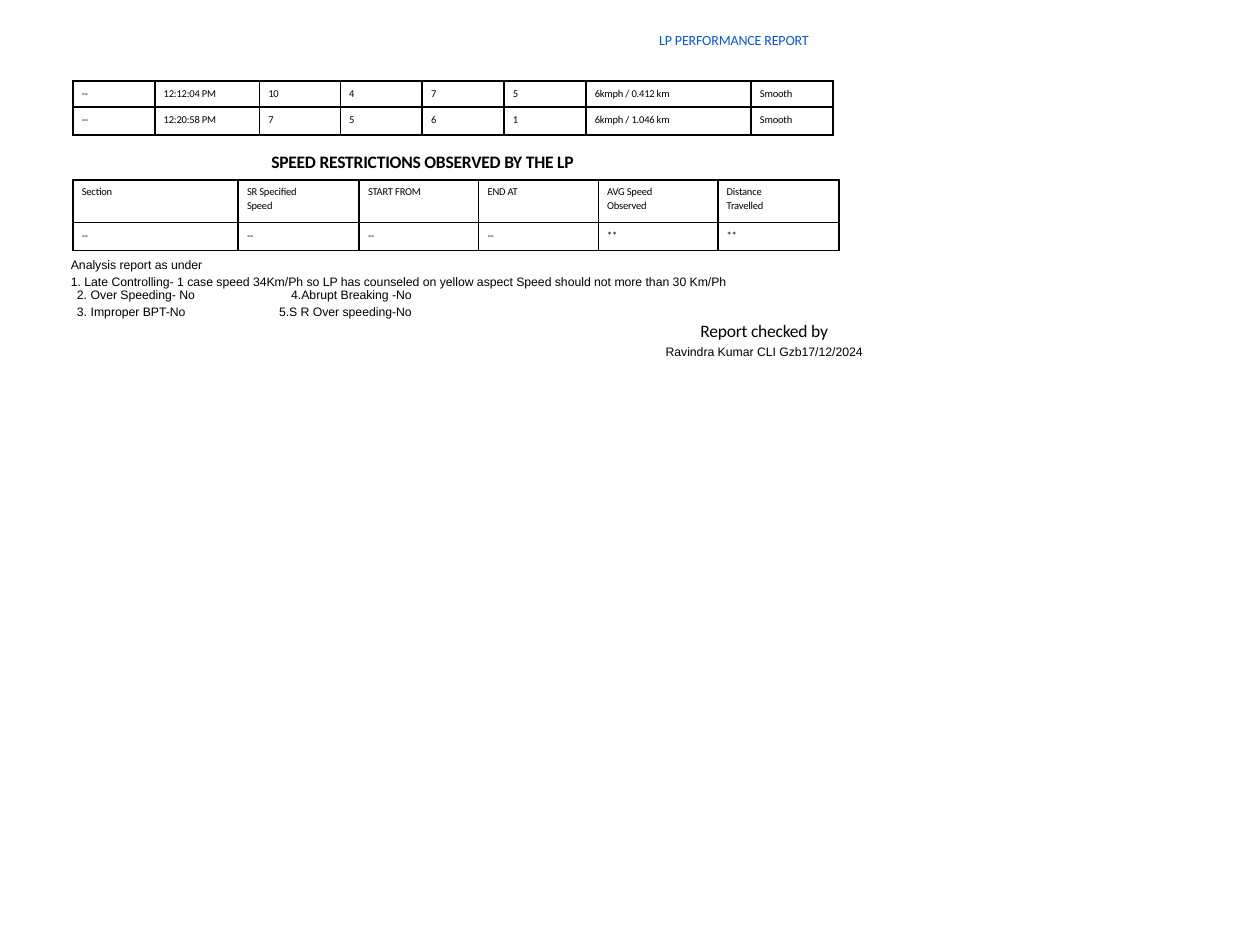
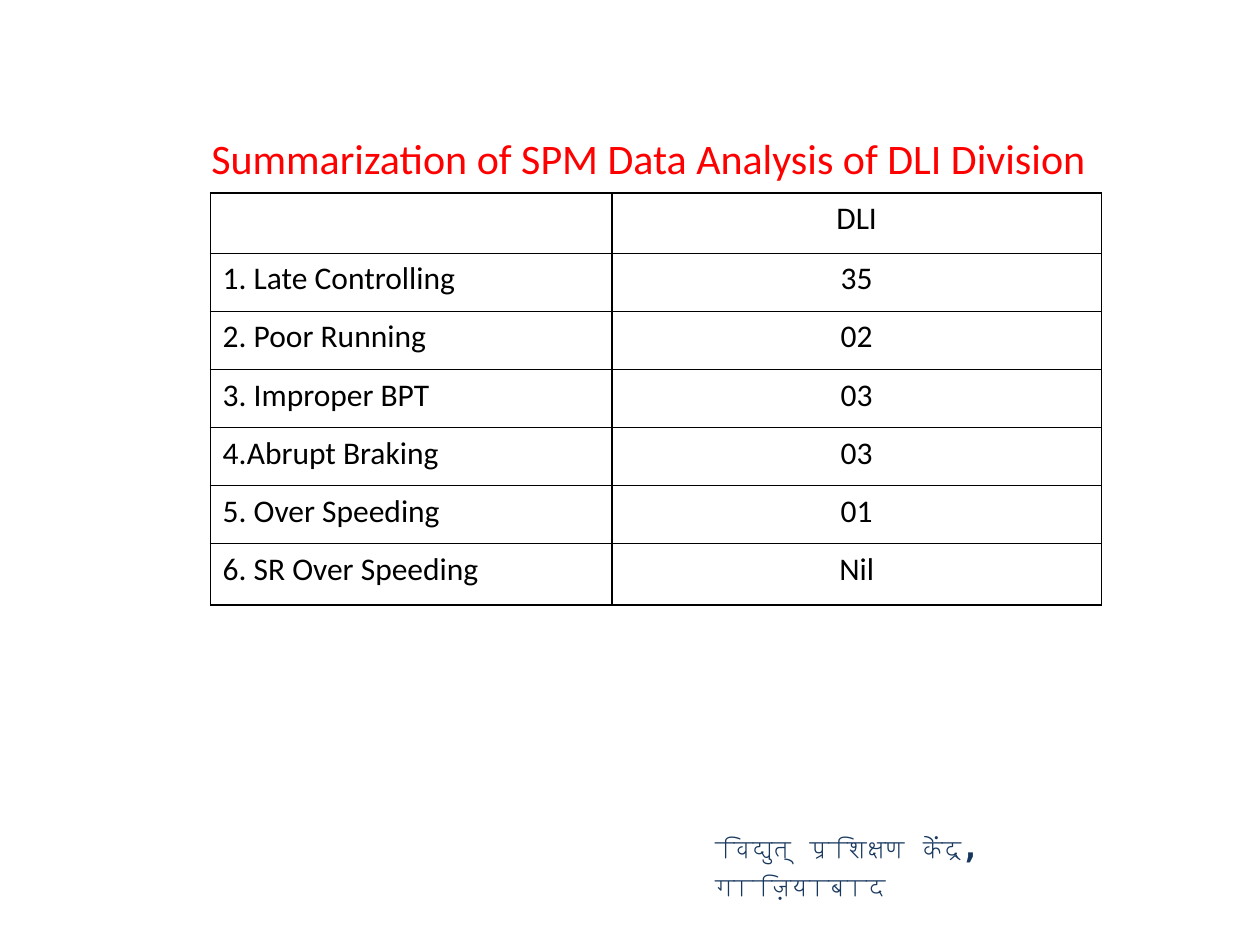
from lxml.etree import SubElement
from pptx import Presentation
from pptx.dml.color import RGBColor
from pptx.enum.text import MSO_AUTO_SIZE, PP_ALIGN
from pptx.oxml.ns import qn
from pptx.util import Cm, Pt

BLACK = RGBColor(0x00, 0x00, 0x00)
REPORT_BLUE = RGBColor(0x11, 0x54, 0xCC)
TITLE_RED = RGBColor(0xFF, 0x00, 0x00)
CENTRE_NAVY = RGBColor(0x17, 0x37, 0x5E)

BODY_FONT = "Calibri"
NOTE_FONT = "Arial"
HINDI_FONT = "DejaVu Sans Mono"
TIGHT = -10  # letter spacing of the report page, hundredths of a point
ROOMY_INSETS = (0.25, 0.13, 0.25, 0.13)

# Report page content
RUN_ROWS = [
    ["--", "12:12:04 PM", "10", "4", "7", "5", "6kmph / 0.412 km", "Smooth"],
    ["--", "12:20:58 PM", "7", "5", "6", "1", "6kmph / 1.046 km", "Smooth"],
]
RESTRICTION_ROWS = [
    ["Section", "SR Specified Speed", "START FROM", "END AT",
     "AVG Speed Observed", "Distance Travelled"],
    ["--", "--", "--", "--", "**", "**"],
]
ANALYSIS = [
    "Analysis report as under",
    "1. Late Controlling- 1 case speed 34Km/Ph so LP has counseled on yellow "
    "aspect Speed should not more than 30 Km/Ph",
]

# Summary page content
SUMMARY_ROWS = [
    ["", "DLI"],
    ["1. Late Controlling", "35"],
    ["2. Poor Running", "02"],
    ["3. Improper BPT", "03"],
    ["4.Abrupt Braking", "03"],
    ["5. Over Speeding", "01"],
    ["6. SR Over Speeding", "Nil"],
]


def set_insets(target, insets):
    left, top, right, bottom = (Cm(inset) for inset in insets)
    target.margin_left, target.margin_top = left, top
    target.margin_right, target.margin_bottom = right, bottom


def style_paragraph(paragraph, size, font=BODY_FONT, color=BLACK, bold=False,
                    align=PP_ALIGN.LEFT, spacing=0):
    paragraph.alignment = align
    for run in paragraph.runs:
        run.font.size = Pt(size)
        run.font.name = font
        run.font.bold = bold
        run.font.color.rgb = color
        if spacing:
            run.font._element.set("spc", str(spacing))


def add_text(slide, box, lines, insets=(0, 0.08, 0, 0), gap=1.1, **style):
    """Text box with one paragraph per line; gap is the points between them."""
    frame = slide.shapes.add_textbox(*(Cm(length) for length in box)).text_frame
    frame.word_wrap = True
    frame.auto_size = MSO_AUTO_SIZE.SHAPE_TO_FIT_TEXT
    set_insets(frame, insets)
    frame.text = "\n".join(lines)
    for index, paragraph in enumerate(frame.paragraphs):
        if index:
            paragraph.space_before = Pt(gap)
        style_paragraph(paragraph, **style)
    return frame


def number_paragraphs(frame, start):
    for paragraph in frame.paragraphs:
        properties = paragraph._p.get_or_add_pPr()
        properties.set("marL", str(Cm(0.33)))
        properties.set("indent", str(Cm(-0.28)))
        SubElement(properties, qn("a:buFont"), typeface=NOTE_FONT)
        SubElement(properties, qn("a:buAutoNum"), type="arabicPeriod",
                   startAt=str(start))


def add_borders(cell):
    properties = cell._tc.get_or_add_tcPr()
    for position, side in enumerate(("lnL", "lnR", "lnT", "lnB")):
        line = properties.makeelement(qn(f"a:{side}"), {"w": str(Pt(1))})
        fill = SubElement(line, qn("a:solidFill"))
        SubElement(fill, qn("a:srgbClr"), val=str(BLACK))
        properties.insert(position, line)


def add_grid(slide, left, top, widths, heights, rows, insets, size,
             value_align=PP_ALIGN.LEFT, spacing=0):
    """Bordered table without fill; value_align holds for all but column 0."""
    table = slide.shapes.add_table(
        len(rows), len(widths), Cm(left), Cm(top),
        Cm(sum(widths)), Cm(sum(heights))).table
    table.first_row = table.horz_banding = False
    for column, width in zip(table.columns, widths):
        column.width = Cm(width)
    for row, height in zip(table.rows, heights):
        row.height = Cm(height)
    for r, values in enumerate(rows):
        for c, value in enumerate(values):
            cell = table.cell(r, c)
            cell.text_frame.text = value
            cell.fill.background()
            set_insets(cell, insets)
            add_borders(cell)
            style_paragraph(cell.text_frame.paragraphs[0], size,
                            align=value_align if c else PP_ALIGN.LEFT,
                            spacing=spacing)
    return table


def build_report(slide):
    heading = {"insets": (0.03, 0.03, 0, 0), "spacing": TIGHT}
    note = {"size": 7, "font": NOTE_FONT}
    grid = {"insets": (0.18, 0.13, 0, 0), "size": 6, "spacing": TIGHT}

    # Running header and the end of the run table
    add_text(slide, (13.26, 0.61, 3.68, 0.38), ["LP PERFORMANCE REPORT"],
             size=8, color=REPORT_BLUE, **heading)
    add_grid(slide, 1.47, 1.63,
             [1.65, 2.11, 1.63, 1.65, 1.65, 1.65, 3.33, 1.65],
             [0.53, 0.56], RUN_ROWS, **grid)

    # Speed restrictions
    add_text(slide, (5.44, 3.02, 7.54, 0.46),
             ["SPEED RESTRICTIONS OBSERVED BY THE LP"],
             size=10, bold=True, **heading)
    restrictions = add_grid(slide, 1.47, 3.63,
                            [3.33, 2.44, 2.41, 2.41, 2.41, 2.44],
                            [0.86, 0.56], RESTRICTION_ROWS, **grid)
    for column_head in restrictions.rows[0].cells:
        set_insets(column_head, (0.18, 0.08, 1, 0))
        column_head.text_frame.paragraphs[0].line_spacing = 1.12

    # Analysis
    add_text(slide, (1.4, 5.11, 16.38, 0.71), ANALYSIS,
             insets=(0.03, 0.08, 0, 0), **note)
    findings = add_text(slide, (1.5, 5.72, 3.07, 0.71),
                        ["Over Speeding- No", "Improper BPT-No"], **note)
    number_paragraphs(findings, start=2)
    add_text(slide, (4.95, 5.72, 3.35, 0.71),
             ["4.Abrupt Breaking -No", "5.S R Over speeding-No"],
             align=PP_ALIGN.RIGHT, **note)

    # Signature
    signature = add_text(slide, (12.93, 6.32, 4.95, 0.97),
                         ["Report checked by",
                          "Ravindra Kumar CLI Gzb17/12/2024"],
                         insets=(0, 0.13, 0, 0), gap=2.1,
                         align=PP_ALIGN.CENTER, **note)
    style_paragraph(signature.paragraphs[0], 10, align=PP_ALIGN.CENTER,
                    spacing=TIGHT)


def build_summary(slide):
    add_grid(slide, 4.24, 3.89, [8.1, 9.86], [1.22] + [1.17] * 5 + [1.24],
             SUMMARY_ROWS, ROOMY_INSETS, 18, value_align=PP_ALIGN.CENTER)
    add_text(slide, (4.01, 2.54, 20.12, 1.27),
             ["Summarization of SPM Data Analysis of DLI Division"],
             insets=ROOMY_INSETS, size=24, color=TITLE_RED)

    # Training centre; Devanagari takes the complex-script font
    centre = add_text(slide, (14.17, 16.54, 8.08, 1.02),
                      ["विद्युत् प्रशिक्षण केंद्र, गाज़ियाबाद"],
                      insets=ROOMY_INSETS, size=18, font=HINDI_FONT,
                      color=CENTRE_NAVY, bold=True)
    centre_run = centre.paragraphs[0].runs[0]
    SubElement(centre_run.font._element, qn("a:cs"), typeface=HINDI_FONT)


def main():
    presentation = Presentation()
    presentation.slide_width = Cm(25.4)
    presentation.slide_height = Cm(19.05)
    blank = presentation.slide_layouts[6]
    for build in (build_report, build_summary):
        build(presentation.slides.add_slide(blank))
    presentation.save("out.pptx")


if __name__ == "__main__":
    main()
